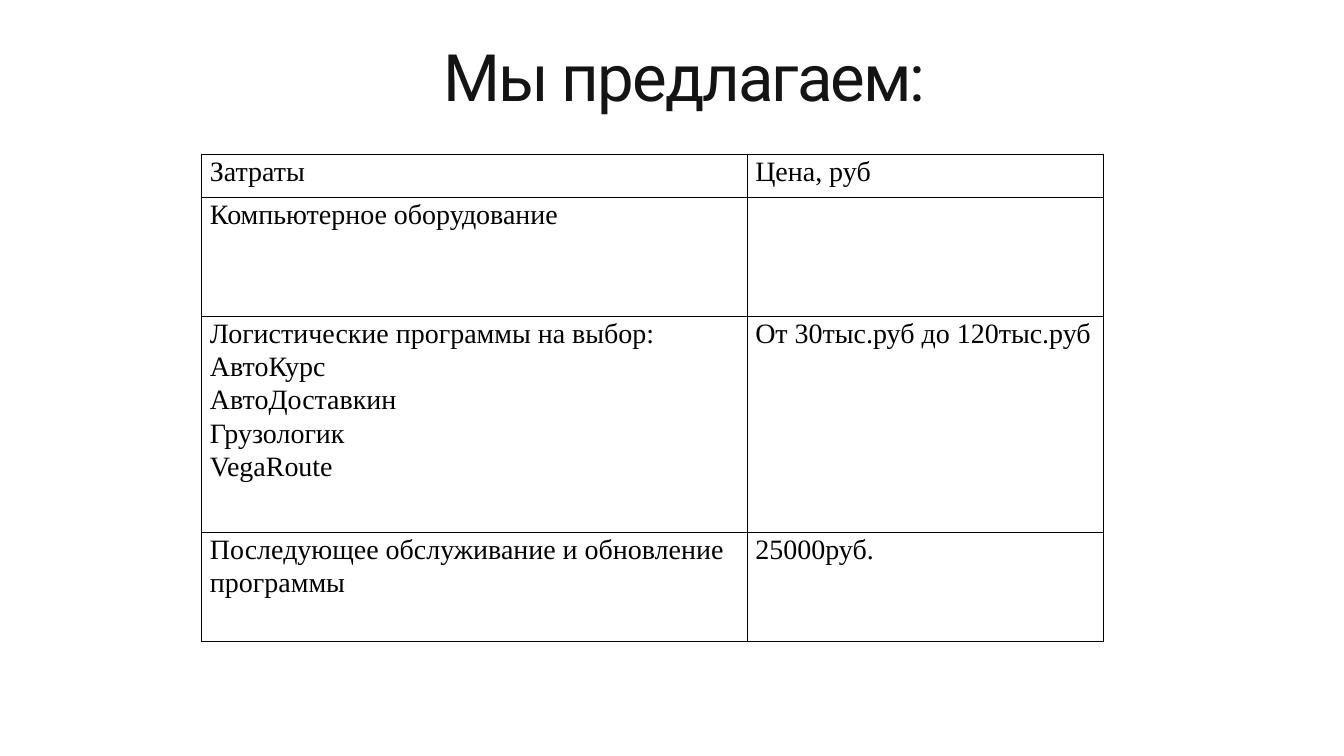
import dataclasses

import pptx
import pptx.dml.color
import pptx.enum.text
import pptx.oxml
import pptx.oxml.ns
import pptx.util


@dataclasses.dataclass(frozen=True)
class Theme:
    background: str = "FFFFFF"
    title_color: str = "141414"
    table_color: str = "000000"
    title_font: str = "Roboto"
    table_font: str = "Times New Roman"
    title_size: int = 70
    table_size: int = 30
    title_leading: int = 84
    table_leading: float = 1.07
    title_tracking: float = -2.1
    border_width: int = 1


THEME = Theme()
EMU_PER_PX = 9525
PAGE_SIZE = (1920, 1080)
TITLE_BOX = (331, 52, 1295, 112)
TABLE_ORIGIN = (288, 220)
COLUMN_WIDTHS = (779, 510)
ROW_HEIGHTS = (62, 170, 309, 155)
CELL_INSET = 12

OFFERS = (
    (("Затраты",), ("Цена, руб",)),
    (("Компьютерное оборудование",), ()),
    (
        (
            "Логистические программы на выбор:",
            "АвтоКурс",
            "АвтоДоставкин",
            "Грузологик",
            "VegaRoute",
        ),
        ("От 30тыс.руб до 120тыс.руб",),
    ),
    (("Последующее обслуживание и обновление программы",), ("25000руб.",)),
)


def px(length):
    return pptx.util.Emu(length * EMU_PER_PX)


def rgb(color):
    return pptx.dml.color.RGBColor.from_string(color)


def add_span(para, text, font, size, color):
    span = para.add_run()
    span.text = text
    span.font.name = font
    span.font.size = pptx.util.Pt(size)
    span.font.color.rgb = rgb(color)
    return span


def add_title(page, text):
    box = page.shapes.add_textbox(*map(px, TITLE_BOX))
    frame = box.text_frame
    frame.word_wrap = True
    frame.margin_left = frame.margin_right = 0
    frame.margin_top = frame.margin_bottom = 0
    para = frame.paragraphs[0]
    para.alignment = pptx.enum.text.PP_ALIGN.CENTER
    para.line_spacing = pptx.util.Pt(THEME.title_leading)
    span = add_span(
        para, text, THEME.title_font, THEME.title_size, THEME.title_color
    )
    span.font._element.set("spc", str(round(THEME.title_tracking * 100)))


def add_borders(cell):
    properties = cell._tc.get_or_add_tcPr()
    width = pptx.util.Pt(THEME.border_width)
    for side in ("lnL", "lnR", "lnT", "lnB"):
        properties.append(
            pptx.oxml.parse_xml(
                f'<a:{side} {pptx.oxml.ns.nsdecls("a")} w="{width}">'
                f'<a:solidFill><a:srgbClr val="{THEME.table_color}"/></a:solidFill>'
                f"</a:{side}>"
            )
        )


def fill_cell(cell, lines):
    add_borders(cell)
    cell.fill.background()
    cell.margin_left = cell.margin_right = px(CELL_INSET)
    cell.margin_top = cell.margin_bottom = 0
    frame = cell.text_frame
    for index, line in enumerate(lines):
        para = frame.add_paragraph() if index else frame.paragraphs[0]
        para.line_spacing = THEME.table_leading
        add_span(para, line, THEME.table_font, THEME.table_size, THEME.table_color)


def add_offer_table(page):
    table = page.shapes.add_table(
        len(ROW_HEIGHTS),
        len(COLUMN_WIDTHS),
        *map(px, TABLE_ORIGIN),
        px(sum(COLUMN_WIDTHS)),
        px(sum(ROW_HEIGHTS)),
    ).table
    table.first_row = False
    table.horz_banding = False
    for column, width in zip(table.columns, COLUMN_WIDTHS):
        column.width = px(width)
    for row, height, offer in zip(table.rows, ROW_HEIGHTS, OFFERS):
        row.height = px(height)
        for cell, lines in zip(row.cells, offer):
            fill_cell(cell, lines)


def main():
    deck = pptx.Presentation()
    deck.slide_width, deck.slide_height = map(px, PAGE_SIZE)
    page = deck.slides.add_slide(deck.slide_layouts[6])
    page.background.fill.solid()
    page.background.fill.fore_color.rgb = rgb(THEME.background)
    add_title(page, "Мы предлагаем:")
    add_offer_table(page)
    deck.save("out.pptx")


if __name__ == "__main__":
    main()
